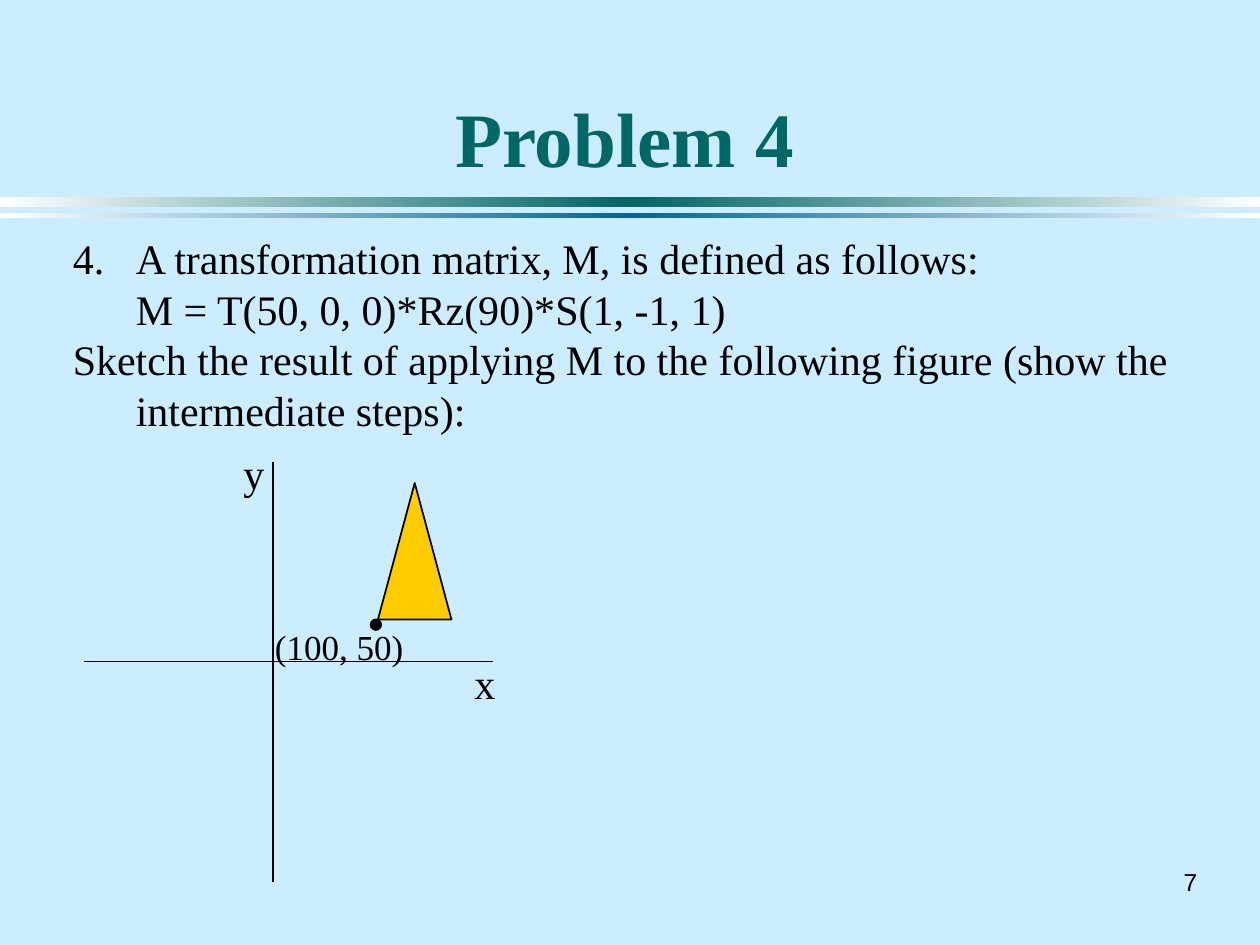
from copy import deepcopy
from dataclasses import dataclass

from lxml.etree import SubElement
from pptx import Presentation
from pptx.dml.color import RGBColor
from pptx.enum.shapes import MSO_CONNECTOR as Connector, MSO_SHAPE as Shape
from pptx.enum.text import MSO_ANCHOR as Anchor, PP_ALIGN as Align
from pptx.oxml.ns import qn
from pptx.util import Inches, Pt


@dataclass(frozen=True)
class Theme:
    background: str = "CCECFF"
    heading: str = "006666"
    accent: str = "006699"
    fade: str = "FFFFFF"
    ink: str = "000000"
    figure: str = "FFCC00"
    serif: str = "Times New Roman"
    sans: str = "Arial"
    title_size: int = 44
    body_size: int = 24
    point_size: int = 20
    number_size: int = 14


THEME = Theme()
COLUMNS, ROWS = 120, 90  # twelve cells to the inch


def cells(*counts):
    return [Inches(count / 12) for count in counts]


def color(code):
    return RGBColor.from_string(code)


def add_text(slide, box, lines, size=THEME.body_size, font=THEME.serif,
             ink=THEME.ink, bold=False, align=Align.LEFT, anchor=Anchor.TOP, wrap=True):
    """Place one paragraph per line and return the paragraphs."""
    frame = slide.shapes.add_textbox(*cells(*box)).text_frame
    frame.word_wrap = wrap
    frame.vertical_anchor = anchor
    frame.text = "\n".join(lines)
    for paragraph in frame.paragraphs:
        paragraph.alignment = align
        paragraph.font.name = font
        paragraph.font.size = Pt(size)
        paragraph.font.bold = bold
        paragraph.font.color.rgb = color(ink)
    return frame.paragraphs


def hang(paragraph, number=None):
    """Give a half-inch hanging indent, numbered if a number is given."""
    properties = paragraph._p.get_or_add_pPr()
    properties.set("marL", str(Inches(0.5)))
    properties.set("indent", str(-Inches(0.5)))
    if number:
        SubElement(properties, qn("a:buAutoNum"), type="arabicPeriod", startAt=str(number))


def add_band(slide, top, height, middle):
    """Draw a full-width bar that fades out towards both ends."""
    band = slide.shapes.add_shape(Shape.RECTANGLE, *cells(0, top, COLUMNS, height))
    band.shadow.inherit = False
    band.line.fill.background()
    band.fill.gradient()
    band.fill.gradient_angle = 0
    first = band.fill._fill._gradFill.find(qn("a:gsLst"))[0]
    first.addnext(deepcopy(first))
    for stop, place, code in zip(band.fill.gradient_stops, (0, 0.5, 1),
                                 (THEME.fade, middle, THEME.fade)):
        stop.position = place
        stop.color.rgb = color(code)


def add_axis(slide, *ends):
    axis = slide.shapes.add_connector(Connector.STRAIGHT, *cells(*ends))
    axis.line.color.rgb = color(THEME.ink)
    axis.line.width = Pt(1)
    SubElement(axis._element.spPr, qn("a:effectLst"))


def add_outlined(slide, kind, box, fill):
    outlined = slide.shapes.add_shape(kind, *cells(*box))
    outlined.shadow.inherit = False
    outlined.fill.solid()
    outlined.fill.fore_color.rgb = color(fill)
    outlined.line.color.rgb = color(THEME.ink)
    outlined.line.width = Pt(1)


def add_question(slide):
    lines = ["A transformation matrix, M, is defined as follows:",
             "\tM = T(50, 0, 0)*Rz(90)*S(1, -1, 1)",
             "Sketch the result of applying M to the following figure "
             "(show the intermediate steps):"]
    paragraphs = add_text(slide, (5.75, 21.6, 107.2, 20.4), lines)
    for paragraph, number in zip(paragraphs, (4, None, None)):
        hang(paragraph, number)


def add_figure(slide):
    add_axis(slide, 26, 44, 26, 84)
    add_axis(slide, 8, 63, 47, 63)
    add_outlined(slide, Shape.ISOSCELES_TRIANGLE, (36, 46, 7, 13), THEME.figure)
    add_outlined(slide, Shape.OVAL, (35.3, 59, 1, 1), THEME.ink)
    add_text(slide, (25, 59, 16, 5.2), ["(100, 50)"], THEME.point_size)
    for name, left, top in (("y", 22, 42), ("x", 44, 62)):
        add_text(slide, (left, top, 3, 6), [name])


def main():
    deck = Presentation()
    deck.slide_width, deck.slide_height = cells(COLUMNS, ROWS)
    slide = deck.slides.add_slide(deck.slide_layouts[6])
    slide.background.fill.solid()
    slide.background.fill.fore_color.rgb = color(THEME.background)

    add_band(slide, 18.75, 1, THEME.heading)
    add_band(slide, 20.25, 0.5, THEME.accent)
    add_text(slide, (110, 82, 5.2, 4), ["7"], THEME.number_size, THEME.sans,
             align=Align.RIGHT, anchor=Anchor.MIDDLE, wrap=False)
    add_text(slide, (8, 3, 103, 15), ["Problem 4"], THEME.title_size, ink=THEME.heading,
             bold=True, align=Align.CENTER, anchor=Anchor.BOTTOM)
    add_question(slide)
    add_figure(slide)
    deck.save("out.pptx")


if __name__ == "__main__":
    main()
